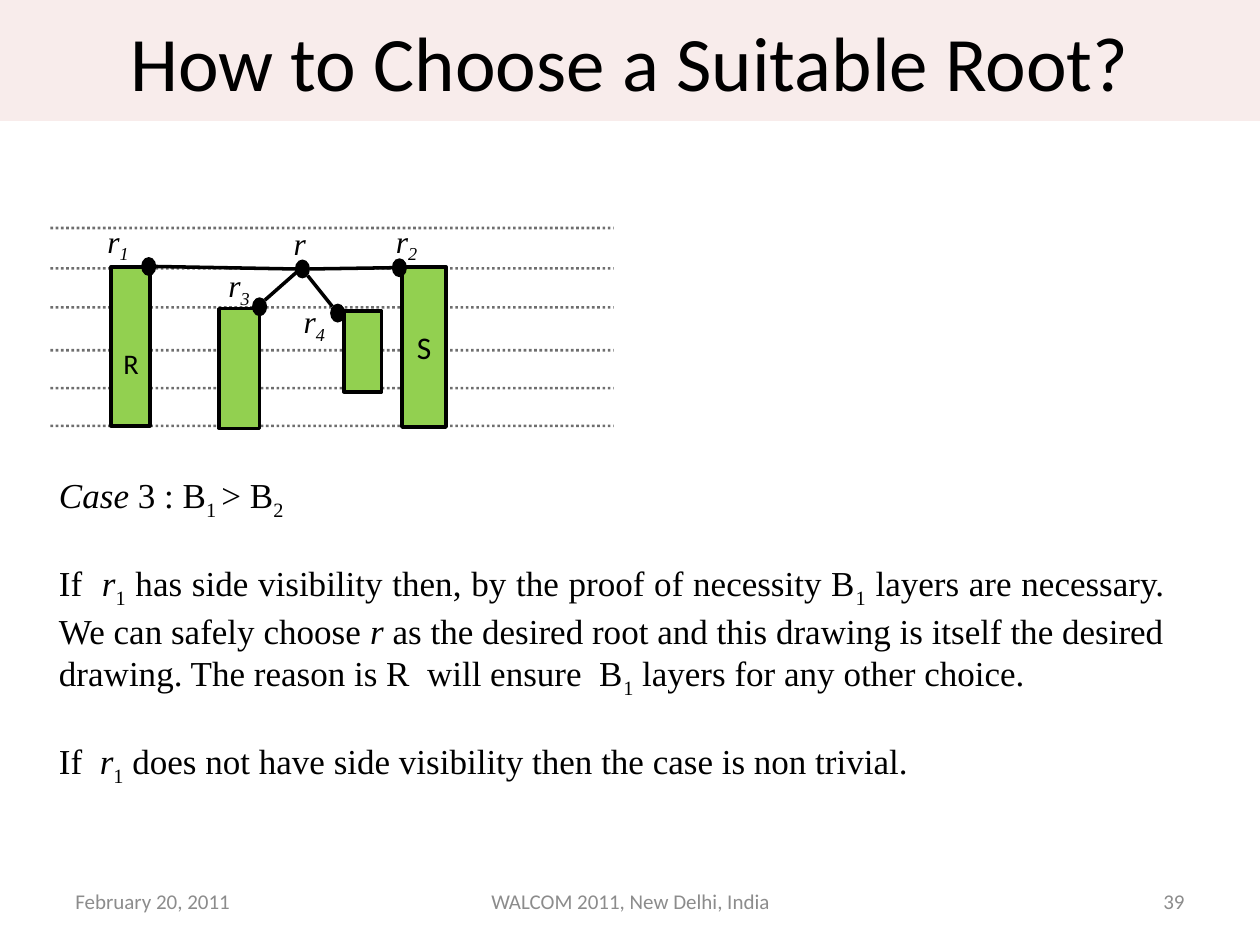
"""Build the slide on choosing a suitable root for a tree drawn on layers."""
from typing import NamedTuple

from lxml import etree
from pptx import Presentation
from pptx.dml.color import RGBColor
from pptx.enum.dml import MSO_LINE
from pptx.enum.shapes import MSO_CONNECTOR, MSO_SHAPE
from pptx.enum.text import MSO_ANCHOR, PP_ALIGN
from pptx.oxml.ns import qn
from pptx.util import Emu, Inches, Pt

RECTANGLE, OVAL, STRAIGHT = MSO_SHAPE.RECTANGLE, MSO_SHAPE.OVAL, MSO_CONNECTOR.STRAIGHT
LEFT, CENTER, RIGHT, JUSTIFY = PP_ALIGN.LEFT, PP_ALIGN.CENTER, PP_ALIGN.RIGHT, PP_ALIGN.JUSTIFY
TOP, MIDDLE = MSO_ANCHOR.TOP, MSO_ANCHOR.MIDDLE
DOTTED = MSO_LINE.ROUND_DOT

BLACK = RGBColor(0x00, 0x00, 0x00)
GREY = RGBColor(0x8C, 0x8C, 0x8C)
GREEN = RGBColor(0x92, 0xD0, 0x50)
PINK = RGBColor(0xE6, 0xB9, 0xB8)
SANS, SERIF = "Calibri", "Times New Roman"

COLUMNS, ROWS = 100, 75
CELL = Inches(0.1)
NODE_WIDTH, NODE_HEIGHT = 1.2, 1.5
LAYER_START, LAYER_END = 4, 48.7
LAYER_ROWS = (18.1, 21.3, 24.4, 27.8, 30.8, 33.8)


class Run(NamedTuple):
    text: str
    italic: bool = False
    subscript: bool = False


class Box(NamedTuple):
    column: float
    row: float
    columns: float
    rows: float


class Subtree(NamedTuple):
    box: Box
    runs: tuple = ()
    size: int = 18


class Vertex(NamedTuple):
    column: float
    row: float
    label: Box
    runs: tuple


class Edge(NamedTuple):
    start: str
    start_share: tuple
    end: str
    end_share: tuple


class Footer(NamedTuple):
    box: Box
    text: str
    align: PP_ALIGN


R_ITALIC = Run("r", italic=True)


def sub(text: str, italic: bool = False) -> Run:
    return Run(text, italic, True)


SUBTREES = (
    Subtree(Box(8.8, 21.2, 3.1, 12.6), (sub("R"),), 28),
    Subtree(Box(17.4, 24.5, 3.2, 9.5)),
    Subtree(Box(31.9, 21.2, 3.5, 12.7), (Run("S"),)),
    Subtree(Box(27.3, 24.7, 3, 6.4)),
)
VERTICES = {
    "r": Vertex(23.4, 20.6, Box(22.1, 17.3, 3.4, 4), (Run("r ", True),)),
    "r1": Vertex(11.2, 20.4, Box(7.4, 17.1, 4.3, 4), (R_ITALIC, sub("1 ", True))),
    "r2": Vertex(31.1, 20.5, Box(30.3, 17.1, 4.3, 4), (R_ITALIC, sub("2 ", True))),
    "r3": Vertex(20, 23.6, Box(17, 20.6, 4.3, 4), (R_ITALIC, sub("3 ", True))),
    "r4": Vertex(26.2, 24.1, Box(23, 23.5, 3.9, 4), (R_ITALIC, sub("4", True))),
}
EDGES = (
    Edge("r1", (1, 0.5), "r", (0, 0.5)),
    Edge("r2", (0, 0.5), "r", (1, 0.5)),
    Edge("r", (0.5, 0.4), "r3", (0.85, 0.15)),
    Edge("r4", (0.15, 0.15), "r", (0.85, 0.85)),
)
FOOTERS = (
    Footer(Box(5, 69.5, 23.3, 4), "February 20, 2011", LEFT),
    Footer(Box(34.2, 69.5, 31.7, 4), "WALCOM 2011, New Delhi, India", CENTER),
    Footer(Box(71.7, 69.5, 23.3, 4), "39", RIGHT),
)
ARGUMENT = (
    (Run("Case ", True), Run("3 : B"), sub("1 "), Run("> B"), sub("2 ")),
    (Run("If  "), R_ITALIC, sub("1"),
     Run(" has side visibility then, by the proof of necessity B"), sub("1"),
     Run(" layers are necessary. We can safely choose "), Run("r ", True),
     Run("as the desired root and this drawing is itself the desired drawing. "
         "The reason is R  will ensure  B"), sub("1"),
     Run(" layers for any other choice. ")),
    (Run("If  "), R_ITALIC, sub("1"),
     Run(" does not have side visibility then the case is non trivial.")),
)


def cells(count: float) -> Emu:
    return Emu(round(count * CELL))


def write(shape, paragraphs: tuple, *, size: float, font: str = SANS, color: RGBColor = BLACK,
          align: PP_ALIGN = CENTER, anchor: MSO_ANCHOR = MIDDLE, wrap: bool = True,
          gap: float = 0) -> None:
    frame = shape.text_frame
    frame.word_wrap = wrap
    frame.vertical_anchor = anchor
    for index, runs in enumerate(paragraphs):
        paragraph = frame.add_paragraph() if index else frame.paragraphs[0]
        paragraph.alignment = align
        paragraph.space_before = Pt(gap if index else 0)
        for part in runs:
            run = paragraph.add_run()
            run.text = part.text
            run.font.name, run.font.size = font, Pt(size)
            run.font.italic = part.italic
            run.font.color.rgb = color
            if part.subscript:
                run._r.get_or_add_rPr().set("baseline", "-25000")


def set_opacity(shape, percent: int) -> None:
    for color in shape.element.spPr.iter(qn("a:srgbClr")):
        etree.SubElement(color, qn("a:alpha")).set("val", str(percent * 1000))


def add_text(shapes, box: Box, paragraphs: tuple, **text_format) -> None:
    write(shapes.add_textbox(*map(cells, box)), paragraphs, **text_format)


def add_figure(shapes, kind: MSO_SHAPE, box: Box, fill: RGBColor, outlined: bool = False):
    figure = shapes.add_shape(kind, *map(cells, box))
    figure.shadow.inherit = False
    figure.fill.solid()
    figure.fill.fore_color.rgb = fill
    if outlined:
        figure.line.color.rgb, figure.line.width = BLACK, Pt(2)
    else:
        figure.line.fill.background()
    return figure


def add_line(shapes, start: tuple, end: tuple, width: float):
    line = shapes.add_connector(STRAIGHT, *map(cells, start + end))
    line.line.color.rgb, line.line.width = BLACK, Pt(width)
    etree.SubElement(line.element.spPr, qn("a:effectLst"))
    return line


def vertex_point(name: str, share: tuple) -> tuple:
    vertex = VERTICES[name]
    return vertex.column + share[0] * NODE_WIDTH, vertex.row + share[1] * NODE_HEIGHT


def add_title(title) -> None:
    title.left, title.top, title.width, title.height = map(cells, Box(0, 0, COLUMNS, 9.6))
    title.fill.solid()
    title.fill.fore_color.rgb = PINK
    set_opacity(title, 27)
    write(title, ((Run("How to Choose a Suitable Root?"),),), size=44)


def add_drawing(shapes) -> None:
    layers = shapes.add_group_shape().shapes
    for row in LAYER_ROWS:
        layer = add_line(layers, (LAYER_START, row), (LAYER_END, row), 1.5)
        layer.line.dash_style = DOTTED
        set_opacity(layer, 56)
    for subtree in SUBTREES:
        block = add_figure(shapes, RECTANGLE, subtree.box, GREEN, outlined=True)
        if subtree.runs:
            write(block, (subtree.runs,), size=subtree.size)
    for edge in EDGES:
        add_line(shapes, vertex_point(edge.start, edge.start_share),
                 vertex_point(edge.end, edge.end_share), 2)
    for vertex in VERTICES.values():
        add_figure(shapes, OVAL, Box(vertex.column, vertex.row, NODE_WIDTH, NODE_HEIGHT), BLACK)
        add_text(shapes, vertex.label, (vertex.runs,), size=18, font=SERIF, anchor=TOP, wrap=False)


def main() -> None:
    presentation = Presentation()
    presentation.slide_width, presentation.slide_height = cells(COLUMNS), cells(ROWS)
    slide = presentation.slides.add_slide(presentation.slide_layouts[5])
    add_title(slide.shapes.title)
    for footer in FOOTERS:
        add_text(slide.shapes, footer.box, ((Run(footer.text),),), size=12, color=GREY,
                 align=footer.align)
    add_text(slide.shapes, Box(3.7, 37.1, 89.7, 27), ARGUMENT, size=20, font=SERIF,
             align=JUSTIFY, anchor=TOP, gap=23)
    add_drawing(slide.shapes)
    presentation.save("out.pptx")


if __name__ == "__main__":
    main()
